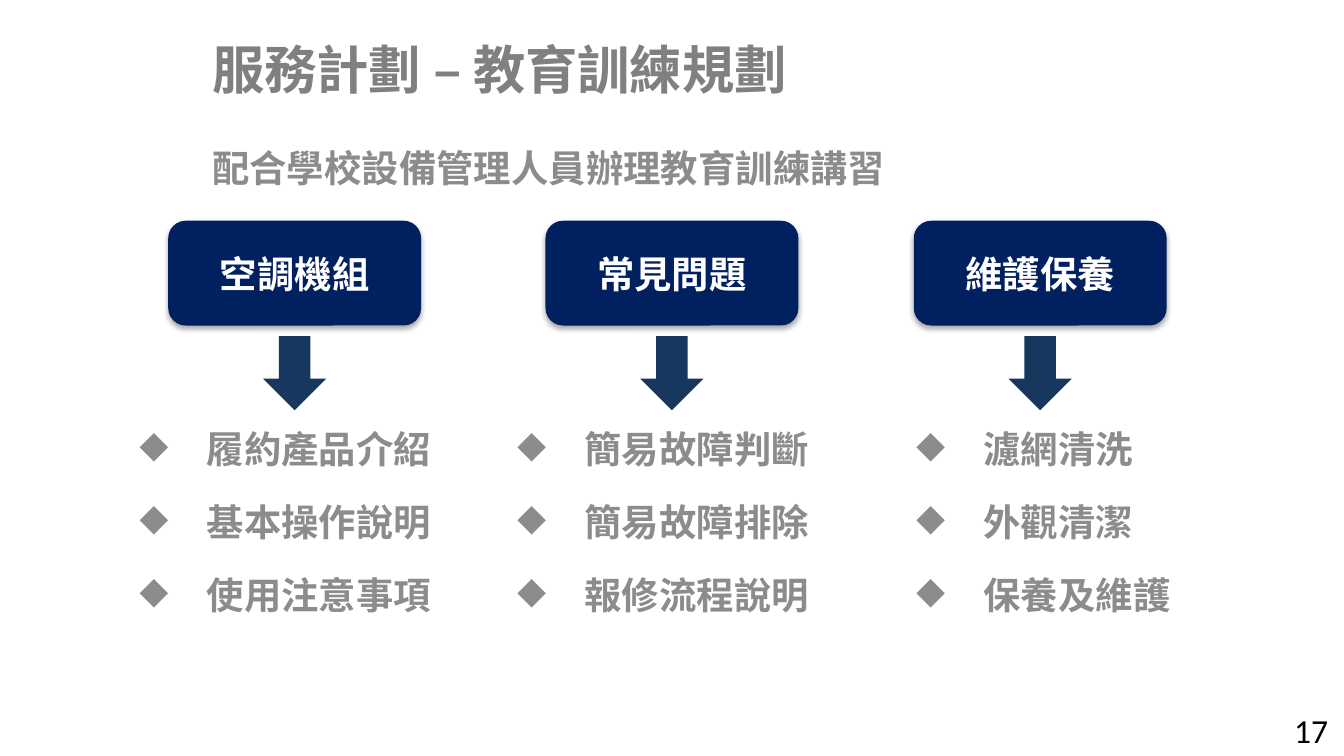
from lxml.etree import SubElement
from pptx import Presentation
from pptx.dml.color import RGBColor
from pptx.enum.shapes import MSO_SHAPE
from pptx.enum.text import MSO_ANCHOR, MSO_AUTO_SIZE, PP_ALIGN
from pptx.oxml.ns import qn
from pptx.util import Cm, Pt

TITLE = "服務計劃 – 教育訓練規劃"
SUBTITLE = "配合學校設備管理人員辦理教育訓練講習"
PAGE = "17"
# heading, box left, list left, list width (cm), list items
TOPICS = [
    ("空調機組", 3.18, 2.39, 9.12, ["履約產品介紹", "基本操作說明", "使用注意事項"]),
    ("常見問題", 10.31, 9.53, 8.2, ["簡易故障判斷", "簡易故障排除", "報修流程說明"]),
    ("維護保養", 17.27, 17.07, 5.61, ["濾網清洗", "外觀清潔", "保養及維護"]),
]
COLORS = {"title": "808080", "body": "8C8C8C", "box": "002060",
          "arrow": "17375E", "white": "FFFFFF", "black": "000000"}
FONT = "Noto Sans CJK SC"
BOX_W, BOX_H, BOX_TOP = 4.78, 1.98, 4.17
ARROW_W, ARROW_H, ARROW_TOP = 1.19, 1.4, 6.35
LIST_TOP, LIST_H = 7.54, 4.37


def rgb(name):
    return RGBColor.from_string(COLORS[name])


def format_text(tf, size, color, font=FONT, bold=True):
    for p in tf.paragraphs:
        for r in p.runs:
            r.font.size, r.font.bold, r.font.name = Pt(size), bold, font
            r.font.color.rgb = rgb(color)
            SubElement(r._r.get_or_add_rPr(), qn("a:ea"), typeface=font)


def add_text(slide, lines, left, top, width, height):
    tf = slide.shapes.add_textbox(Cm(left), Cm(top), Cm(width), Cm(height)).text_frame
    tf.word_wrap = True
    tf.text = "\n".join(lines)
    return tf


def add_solid(slide, kind, color, left, top, width, height):
    sp = slide.shapes.add_shape(kind, Cm(left), Cm(top), Cm(width), Cm(height))
    sp.shadow.inherit = False
    sp.fill.solid()
    sp.fill.fore_color.rgb = rgb(color)
    sp.line.fill.background()
    return sp


def add_drop_shadow(sp):
    effects = sp._element.spPr.find(qn("a:effectLst"))
    shadow = SubElement(effects, qn("a:outerShdw"), blurRad=str(Pt(3.1)),
                        dist=str(Pt(1.8)), dir="5400000", rotWithShape="0")
    color = SubElement(shadow, qn("a:srgbClr"), val=COLORS["black"])
    SubElement(color, qn("a:alpha"), val="35000")


def add_bullets(tf):
    for i, p in enumerate(tf.paragraphs):
        p.line_spacing = Pt(35)
        p.space_before = Pt(4 if i else 0)
        pPr = p._p.get_or_add_pPr()
        pPr.set("marL", str(Cm(1.27)))
        pPr.set("indent", str(Cm(-1.27)))
        SubElement(pPr, qn("a:buChar"), char="◆")


def add_topic(slide, heading, box_left, list_left, list_width, items):
    box = add_solid(slide, MSO_SHAPE.ROUNDED_RECTANGLE, "box",
                    box_left, BOX_TOP, BOX_W, BOX_H)
    add_drop_shadow(box)
    tf = box.text_frame
    tf.text = heading
    tf.vertical_anchor = MSO_ANCHOR.MIDDLE
    tf.paragraphs[0].alignment = PP_ALIGN.CENTER
    format_text(tf, 20, "white")

    add_solid(slide, MSO_SHAPE.DOWN_ARROW, "arrow",
              box_left + (BOX_W - ARROW_W) / 2, ARROW_TOP, ARROW_W, ARROW_H)

    tf = add_text(slide, items, list_left, LIST_TOP, list_width, LIST_H)
    add_bullets(tf)
    format_text(tf, 20, "body")


def main():
    prs = Presentation()
    prs.slide_width, prs.slide_height = Cm(25.4), Cm(14.28)
    slide = prs.slides.add_slide(prs.slide_layouts[5])

    title = slide.shapes.title
    title.left, title.top, title.width, title.height = Cm(3.76), Cm(0.58), Cm(11.63), Cm(1.45)
    tf = title.text_frame
    tf.text = TITLE
    tf.word_wrap = False
    tf.auto_size = MSO_AUTO_SIZE.NONE
    tf.vertical_anchor = MSO_ANCHOR.TOP
    tf.paragraphs[0].alignment = PP_ALIGN.LEFT
    format_text(tf, 28, "title")

    tf = add_text(slide, [SUBTITLE], 3.76, 2.59, 15.47, 1.4)
    tf.paragraphs[0].line_spacing = Pt(25)
    format_text(tf, 20, "body")

    for topic in TOPICS:
        add_topic(slide, *topic)

    tf = add_text(slide, [PAGE], 24.21, 13.28, 1.19, 1)
    format_text(tf, 18, "black", font="Calibri", bold=False)
    prs.save("out.pptx")


if __name__ == "__main__":
    main()
